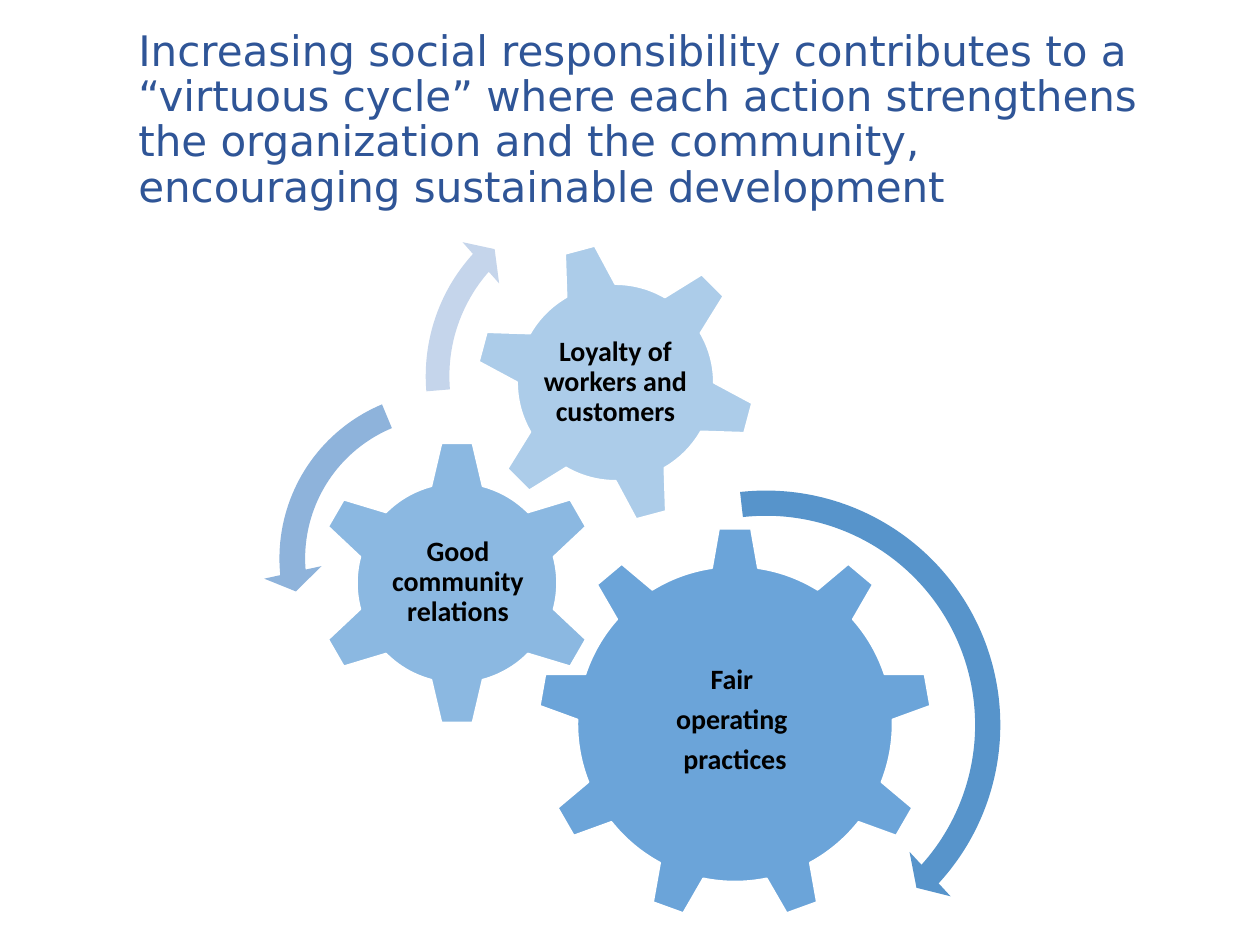
"""Builds a slide of three interlocking gears showing a virtuous cycle."""
from lxml import etree
from pptx import Presentation
from pptx.dml.color import RGBColor
from pptx.enum.shapes import MSO_SHAPE
from pptx.enum.text import MSO_ANCHOR, PP_ALIGN
from pptx.oxml.ns import qn
from pptx.util import Emu, Pt

GEAR_6, GEAR_9 = MSO_SHAPE.GEAR_6, MSO_SHAPE.GEAR_9
CLOCKWISE, COUNTER = MSO_SHAPE.CIRCULAR_ARROW, MSO_SHAPE.LEFT_CIRCULAR_ARROW
MIDDLE, LEFT, CENTER = MSO_ANCHOR.MIDDLE, PP_ALIGN.LEFT, PP_ALIGN.CENTER

TITLE = ("Increasing social responsibility contributes to a “virtuous cycle” where each action "
         "strengthens the organization and the community, encouraging sustainable development")
TITLE_BOX = (126, 21, 1071, 199)
GEAR_COLOR = "5B9BD5"
GEARS = [
    {"kind": GEAR_9, "at": (538, 527), "size": 394, "turn": 0, "opacity": 90,
     "label": ["Fair ", "operating ", "practices"], "label_box": (617, 619, 236, 203)},
    {"kind": GEAR_6, "at": (314, 440), "size": 286, "turn": 0, "opacity": 70,
     "label": ["Good community relations"], "label_box": (387, 512, 142, 141)},
    {"kind": GEAR_6, "at": (475, 242), "size": 281, "turn": 345, "opacity": 50,
     "label": ["Loyalty of workers and customers"], "label_box": (537, 304, 157, 157)},
]
ARROWS = [
    (CLOCKWISE, (514, 473), 504, "5794CB", (0.05, 2.99, 25.36, 158.2, 0.06)),
    (COUNTER, (263, 375), 367, "8EB3DB", (0.07, 4.3, 104.89, 148.38, 0.08)),
    (CLOCKWISE, (410, 179), 394, "C5D5EB", (0.06, 3.94, 133.14, 105.08, 0.07)),
]


def px(length):
    return Emu(round(length * 914400 / 126))


def rgb(color):
    return RGBColor.from_string(color)


def add_words(slide, box, lines, font, size, color, align, bold=False, inset=None, after=0):
    frame = slide.shapes.add_textbox(*map(px, box)).text_frame
    frame.word_wrap = True
    frame.vertical_anchor = MIDDLE
    if inset is not None:
        frame.margin_left = frame.margin_right = px(inset)
        frame.margin_top = frame.margin_bottom = px(inset)
    frame.text = "\n".join(lines)
    for line in frame.paragraphs:
        line.alignment = align
        line.line_spacing = 0.9
        line.space_after = Pt(after)
        line.font.name = font
        line.font.size = Pt(size)
        line.font.bold = bold
        line.font.color.rgb = rgb(color)


def add_wheel(slide, kind, at, size, color):
    wheel = slide.shapes.add_shape(kind, *map(px, (*at, size, size)))
    wheel.shadow.inherit = False
    wheel.fill.solid()
    wheel.fill.fore_color.rgb = rgb(color)
    return wheel


def add_gear(slide, gear):
    wheel = add_wheel(slide, gear["kind"], gear["at"], gear["size"], GEAR_COLOR)
    wheel.rotation = gear["turn"]
    wheel.line.color.rgb = rgb("FFFFFF")
    wheel.line.width = Pt(1)
    fill_color = wheel.fill._xPr.find(qn("a:solidFill"))[0]
    etree.SubElement(fill_color, qn("a:alpha"), val=str(gear["opacity"] * 1000))
    add_words(slide, gear["label_box"], gear["label"], "Calibri", 16, "000000", CENTER,
              bold=True, inset=3, after=5.6)


def add_arrow(slide, kind, at, size, color, bends):
    arrow = add_wheel(slide, kind, at, size, color)
    arrow.line.fill.background()
    for index, bend in enumerate(bends):
        arrow.adjustments[index] = bend


def main():
    deck = Presentation()
    deck.slide_width, deck.slide_height = px(1260), px(945)
    slide = deck.slides.add_slide(deck.slide_layouts[6])
    add_words(slide, TITLE_BOX, [TITLE], "DejaVu Sans", 24, "2F5597", LEFT)
    for gear in GEARS:
        add_gear(slide, gear)
    for arrow in ARROWS:
        add_arrow(slide, *arrow)
    deck.save("out.pptx")


if __name__ == "__main__":
    main()
